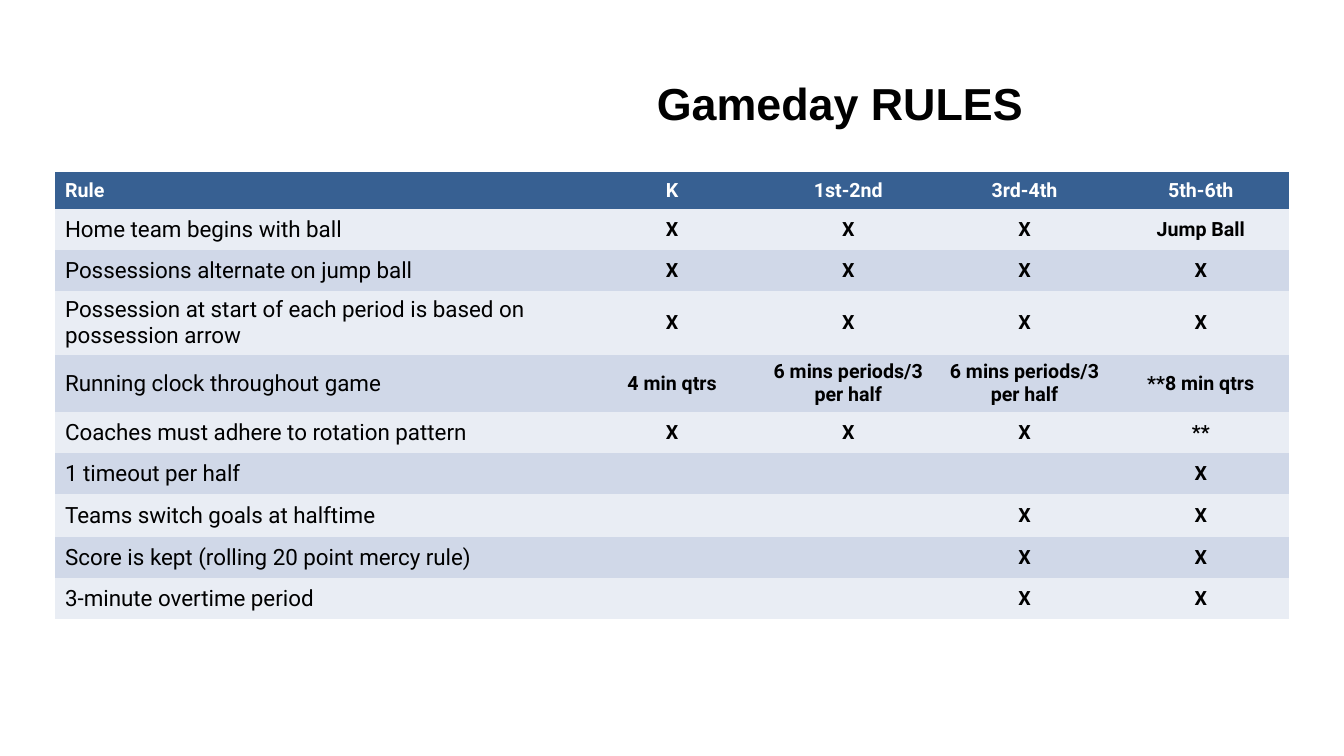
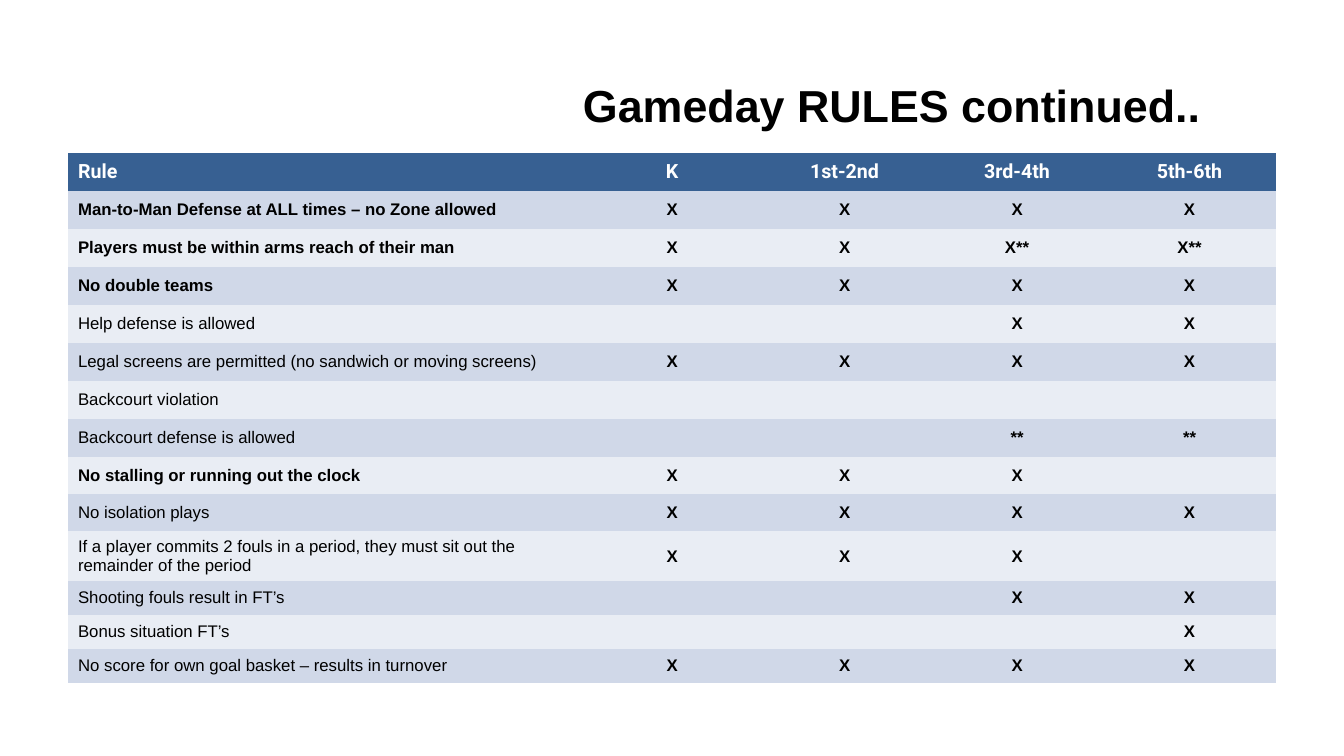
from itertools import cycle
from pptx import Presentation
from pptx.dml.color import RGBColor
from pptx.enum.text import MSO_ANCHOR, PP_ALIGN
from pptx.util import Pt

PX = 914400 / 100.8
NO_GRID = "{2D5ABB26-0587-4C30-8999-92F81FD0307C}"
BLACK = RGBColor(0x00, 0x00, 0x00)
WHITE = RGBColor(0xFF, 0xFF, 0xFF)
NAVY = RGBColor(0x37, 0x60, 0x92)
LIGHT = RGBColor(0xE9, 0xED, 0xF4)
DARK = RGBColor(0xD0, 0xD8, 0xE8)

HEADER = ("Rule", "K", "1st-2nd", "3rd-4th", "5th-6th")
ALL = ("X", "X", "X", "X")
LOWER = ("X", "X", "X", "")
UPPER = ("", "", "X", "X")
OLDEST = ("", "", "", "X")
NONE = ("", "", "", "")

SLIDES = [
    {
        "title": "Gameday RULES", "title_at": (399, 71),
        "left": 55, "top": 172, "width": 1234, "label_width": 529,
        "font": "Roboto", "label_size": 16, "mark_size": 14,
        "stripes": (LIGHT, DARK), "bold_labels": (),
        "tables": [
            [
                (37, HEADER),
                (41, ("Home team begins with ball", "X", "X", "X", "Jump Ball")),
                (41, ("Possessions alternate on jump ball", *ALL)),
                (64, ("Possession at start of each period is based on possession arrow", *ALL)),
                (57, ("Running clock throughout game", "4 min qtrs", "6 mins periods/3 per half",
                      "6 mins periods/3 per half", "**8 min qtrs")),
                (41, ("Coaches must adhere to rotation pattern", "X", "X", "X", "**")),
                (41, ("1 timeout per half", *OLDEST)),
            ],
            [
                (43, ("Teams switch goals at halftime", *UPPER)),
                (41, ("Score is kept (rolling 20 point mercy rule)", *UPPER)),
                (41, ("3-minute overtime period", *UPPER)),
            ],
        ],
    },
    {
        "title": "Gameday RULES continued..", "title_at": (451, 73),
        "left": 68, "top": 153, "width": 1208, "label_width": 518,
        "font": "Arial", "label_size": 12, "mark_size": 12,
        "stripes": (DARK, LIGHT),
        "bold_labels": (
            "Man-to-Man Defense at ALL times – no Zone allowed",
            "Players must be within arms reach of their man",
            "No double teams",
            "No stalling or running out the clock",
        ),
        "tables": [
            [
                (38, HEADER),
                (38, ("Man-to-Man Defense at ALL times – no Zone allowed", *ALL)),
                (38, ("Players must be within arms reach of their man", "X", "X", "X**", "X**")),
                (38, ("No double teams", *ALL)),
                (38, ("Help defense is allowed", *UPPER)),
                (38, ("Legal screens are permitted (no sandwich or moving screens)", *ALL)),
                (38, ("Backcourt violation", *NONE)),
                (38, ("Backcourt defense is allowed", "", "", "**", "**")),
                (37, ("No stalling or running out the clock", *LOWER)),
            ],
            [
                (37, ("No isolation plays", *ALL)),
                (50, ("If a player commits 2 fouls in a period, they must sit out the remainder of the period",
                      *LOWER)),
            ],
            [
                (34, ("Shooting fouls result in FT’s", *UPPER)),
                (34, ("Bonus situation FT’s", *OLDEST)),
                (34, ("No score for own goal basket – results in turnover", *ALL)),
            ],
        ],
    },
]


def px(length):
    return round(length * PX)


def style(paragraph, name, size, color, bold, align):
    paragraph.alignment = align
    font = paragraph.font
    font.name, font.size, font.bold = name, Pt(size), bold
    font.color.rgb = color


def add_title(page, text, left, top):
    box = page.shapes.add_textbox(px(left), px(top), px(882), px(65))
    box.text_frame.word_wrap = True
    paragraph = box.text_frame.paragraphs[0]
    paragraph.text = text
    style(paragraph, "Arial", 32, BLACK, True, PP_ALIGN.CENTER)


def fill_row(cells, values, look, stripes):
    is_header = values is HEADER
    fill = NAVY if is_header else next(stripes)
    for column, (cell, text) in enumerate(zip(cells, values)):
        is_label = column == 0
        cell.fill.solid()
        cell.fill.fore_color.rgb = fill
        cell.vertical_anchor = MSO_ANCHOR.MIDDLE
        paragraph = cell.text_frame.paragraphs[0]
        paragraph.text = text
        align = PP_ALIGN.LEFT if is_label else PP_ALIGN.CENTER
        if is_header:
            style(paragraph, "Roboto", 14, WHITE, True, align)
        else:
            size = look["label_size"] if is_label else look["mark_size"]
            bold = not is_label or text in look["bold_labels"]
            style(paragraph, look["font"], size, BLACK, bold, align)


def add_rules(page, rows, top, look, stripes):
    height = sum(row_height for row_height, _ in rows)
    frame = page.shapes.add_table(len(rows), len(HEADER), px(look["left"]), px(top),
                                  px(look["width"]), px(height))
    table = frame.table
    table.first_row = table.horz_banding = False
    table._tbl.tblPr.find("{*}tableStyleId").text = NO_GRID
    mark_width = (look["width"] - look["label_width"]) / (len(HEADER) - 1)
    for index, column in enumerate(table.columns):
        column.width = px(mark_width if index else look["label_width"])
    for row, (row_height, values) in zip(table.rows, rows):
        row.height = px(row_height)
        fill_row(row.cells, values, look, stripes)
    return top + height


def main():
    deck = Presentation()
    deck.slide_width, deck.slide_height = px(1344), px(756)
    for look in SLIDES:
        page = deck.slides.add_slide(deck.slide_layouts[6])
        add_title(page, look["title"], *look["title_at"])
        top = look["top"]
        stripes = cycle(look["stripes"])
        for rows in look["tables"]:
            top = add_rules(page, rows, top, look, stripes)
    deck.save("out.pptx")


if __name__ == "__main__":
    main()
